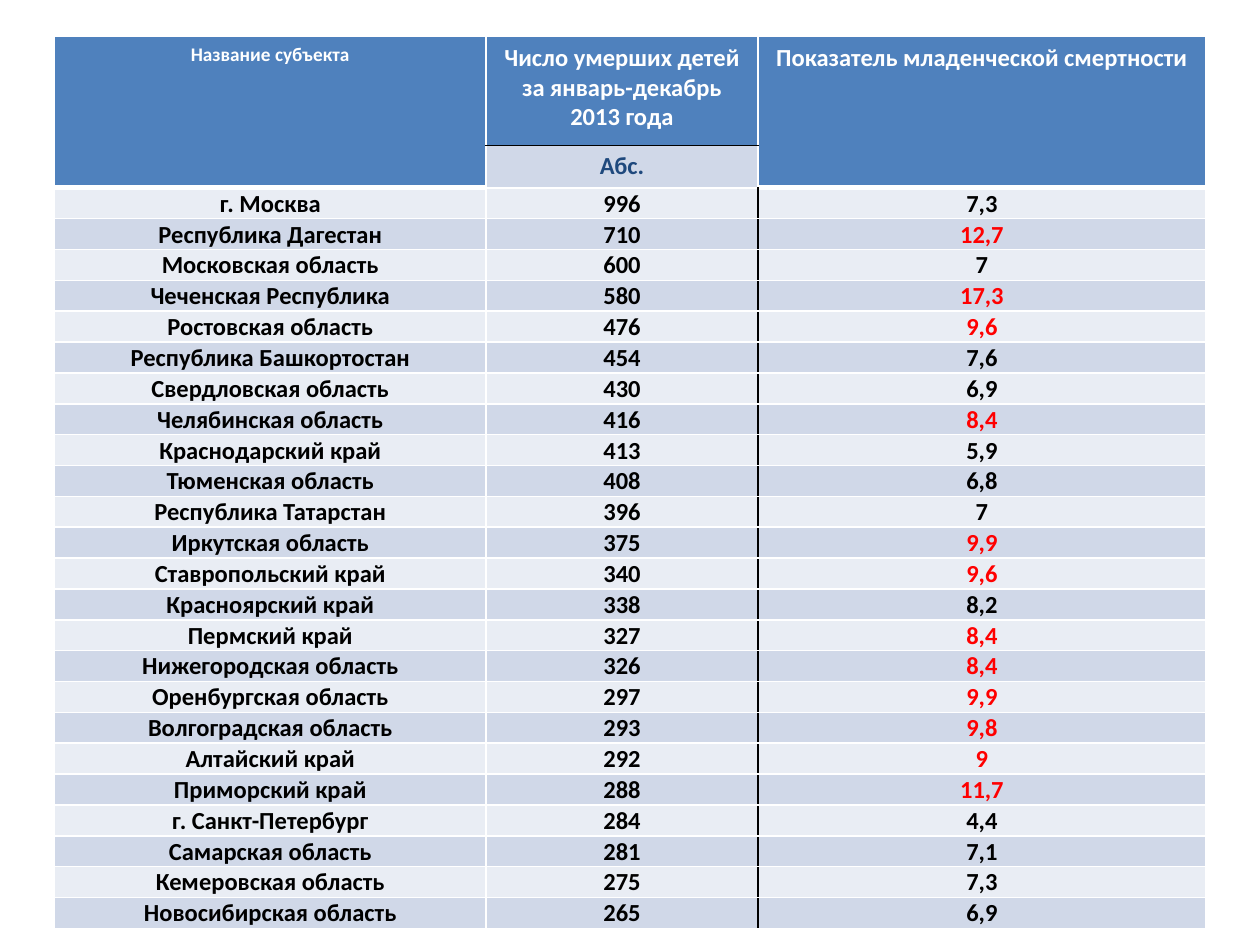
from dataclasses import dataclass

from lxml.etree import SubElement
from pptx import Presentation
from pptx.dml.color import RGBColor
from pptx.enum.text import MSO_ANCHOR, PP_ALIGN
from pptx.oxml.ns import qn
from pptx.util import Cm, Pt


@dataclass(frozen=True)
class Theme:
    font: str = "Calibri"
    small_size: int = 11
    text_size: int = 14
    header: str = "4F81BD"
    dark_band: str = "D0D8E8"
    light_band: str = "E9EDF4"
    white: str = "FFFFFF"
    black: str = "000000"
    navy: str = "1F497D"
    red: str = "FF0000"


theme = Theme()

HIGH_RATE = 8.4  # rates from here on are shown in red
HEADER_ROWS = 2
COLUMN_WIDTHS = (8.7, 5.48, 9.03)
HEADER_HEIGHTS = (2.19, 0.84)
BODY_HEIGHT = 0.62

REGIONS = [
    ("г. Москва", "996", "7,3"),
    ("Республика Дагестан", "710", "12,7"),
    ("Московская область", "600", "7"),
    ("Чеченская Республика", "580", "17,3"),
    ("Ростовская область", "476", "9,6"),
    ("Республика Башкортостан", "454", "7,6"),
    ("Свердловская область", "430", "6,9"),
    ("Челябинская область", "416", "8,4"),
    ("Краснодарский край", "413", "5,9"),
    ("Тюменская область", "408", "6,8"),
    ("Республика Татарстан", "396", "7"),
    ("Иркутская область", "375", "9,9"),
    ("Ставропольский край", "340", "9,6"),
    ("Красноярский край", "338", "8,2"),
    ("Пермский край", "327", "8,4"),
    ("Hижегородская область", "326", "8,4"),
    ("Оренбургская область", "297", "9,9"),
    ("Волгоградская область", "293", "9,8"),
    ("Алтайский край", "292", "9"),
    ("Приморский край", "288", "11,7"),
    ("г. Санкт-Петербург", "284", "4,4"),
    ("Самарская область", "281", "7,1"),
    ("Кемеровская область", "275", "7,3"),
    ("Новосибирская область", "265", "6,9"),
]


def set_borders(cell, **changes):
    """Draw white 1 pt borders; changes maps a side (L, R, T, B) to (colour, points)."""
    properties = cell._tc.get_or_add_tcPr()
    for side in "LRTB":
        color, width = changes.get(side, (theme.white, 1))
        line = SubElement(properties, qn(f"a:ln{side}"), w=str(Pt(width)))
        fill = SubElement(line, qn("a:solidFill"))
        SubElement(fill, qn("a:srgbClr"), val=color)


def fill_cell(cell, text, background, color, size=theme.text_size):
    cell.fill.solid()
    cell.fill.fore_color.rgb = RGBColor.from_string(background)
    cell.text_frame.text = text
    paragraph = cell.text_frame.paragraphs[0]
    paragraph.alignment = PP_ALIGN.CENTER
    for run in paragraph.runs:
        run.font.name = theme.font
        run.font.size = Pt(size)
        run.font.bold = True
        run.font.color.rgb = RGBColor.from_string(color)


presentation = Presentation()
presentation.slide_width = Cm(25.4)
presentation.slide_height = Cm(19.05)
slide = presentation.slides.add_slide(presentation.slide_layouts[6])

row_heights = HEADER_HEIGHTS + (BODY_HEIGHT,) * len(REGIONS)
table = slide.shapes.add_table(
    len(row_heights), len(COLUMN_WIDTHS),
    Cm(1.1), Cm(0.74), Cm(sum(COLUMN_WIDTHS)), Cm(sum(row_heights)),
).table
for column, width in zip(table.columns, COLUMN_WIDTHS):
    column.width = Cm(width)
for row, height in zip(table.rows, row_heights):
    row.height = Cm(height)

# Header: the outer columns span both rows, the middle one is split
black_line = (theme.black, 1)
thick_line = (theme.white, 3)
for column_index in (0, 2):
    table.cell(0, column_index).merge(table.cell(1, column_index))
    for row_index in range(HEADER_ROWS):
        set_borders(table.cell(row_index, column_index), B=thick_line)
set_borders(table.cell(0, 1), B=black_line)
set_borders(table.cell(1, 1), T=black_line, R=black_line)

fill_cell(table.cell(0, 0), "Название субъекта", theme.header, theme.white, theme.small_size)
fill_cell(table.cell(0, 1), "Число умерших детей за январь-декабрь 2013 года",
          theme.header, theme.white)
fill_cell(table.cell(0, 2), "Показатель младенческой смертности", theme.header, theme.white)
fill_cell(table.cell(1, 1), "Абс.", theme.dark_band, theme.navy)

# Body: banded rows with a black rule before the rate column
column_borders = ({}, {"R": black_line}, {"L": black_line})
for region_index, region in enumerate(REGIONS):
    band = theme.dark_band if region_index % 2 else theme.light_band
    is_high = float(region[2].replace(",", ".")) >= HIGH_RATE
    text_colors = (theme.black, theme.black, theme.red if is_high else theme.black)
    for column_index, text in enumerate(region):
        cell = table.cell(HEADER_ROWS + region_index, column_index)
        set_borders(cell, **column_borders[column_index])
        fill_cell(cell, text, band, text_colors[column_index])
        cell.vertical_anchor = MSO_ANCHOR.BOTTOM
        cell.margin_left = cell.margin_right = cell.margin_top = Cm(0.02)
        cell.margin_bottom = Cm(0)

presentation.save("out.pptx")
